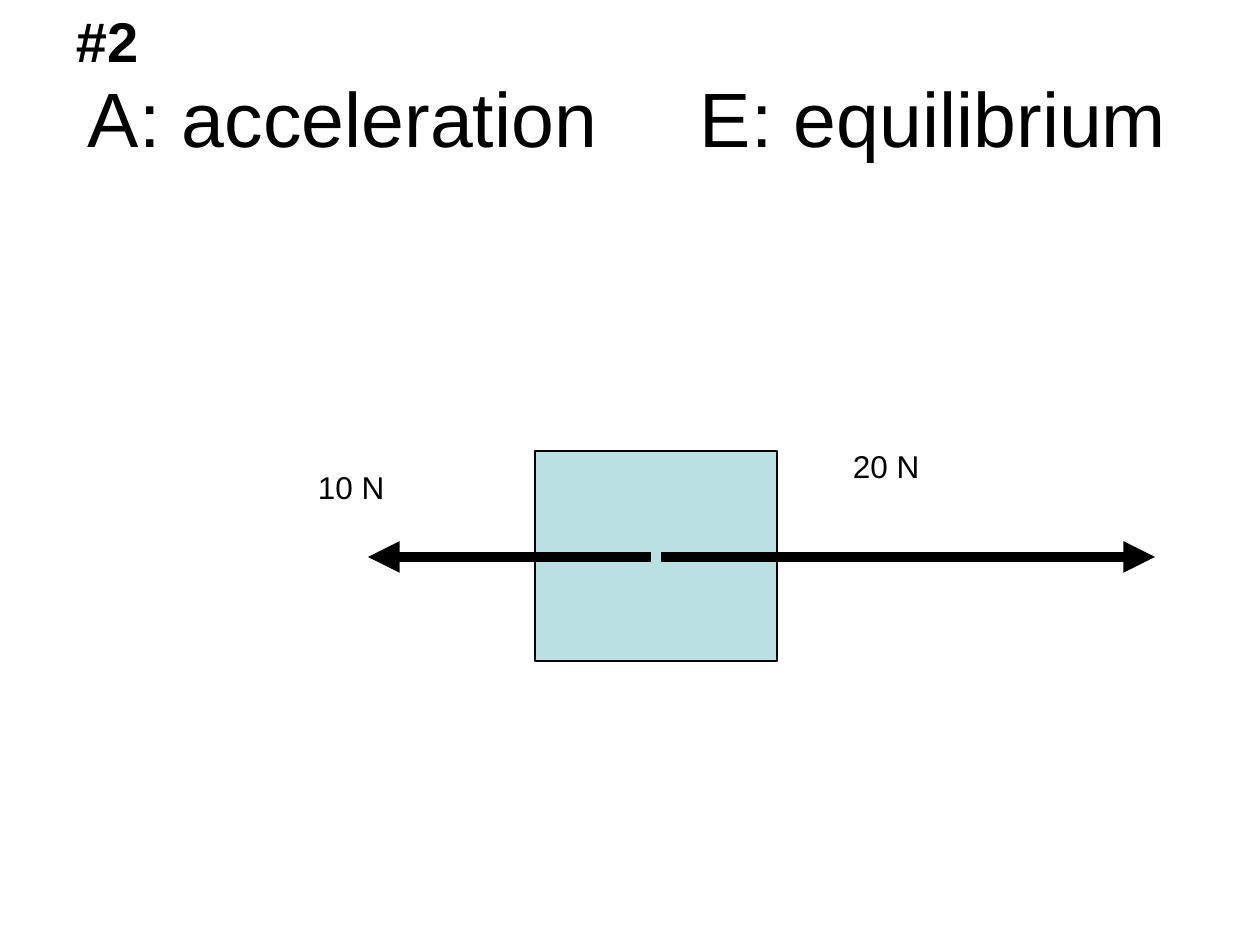
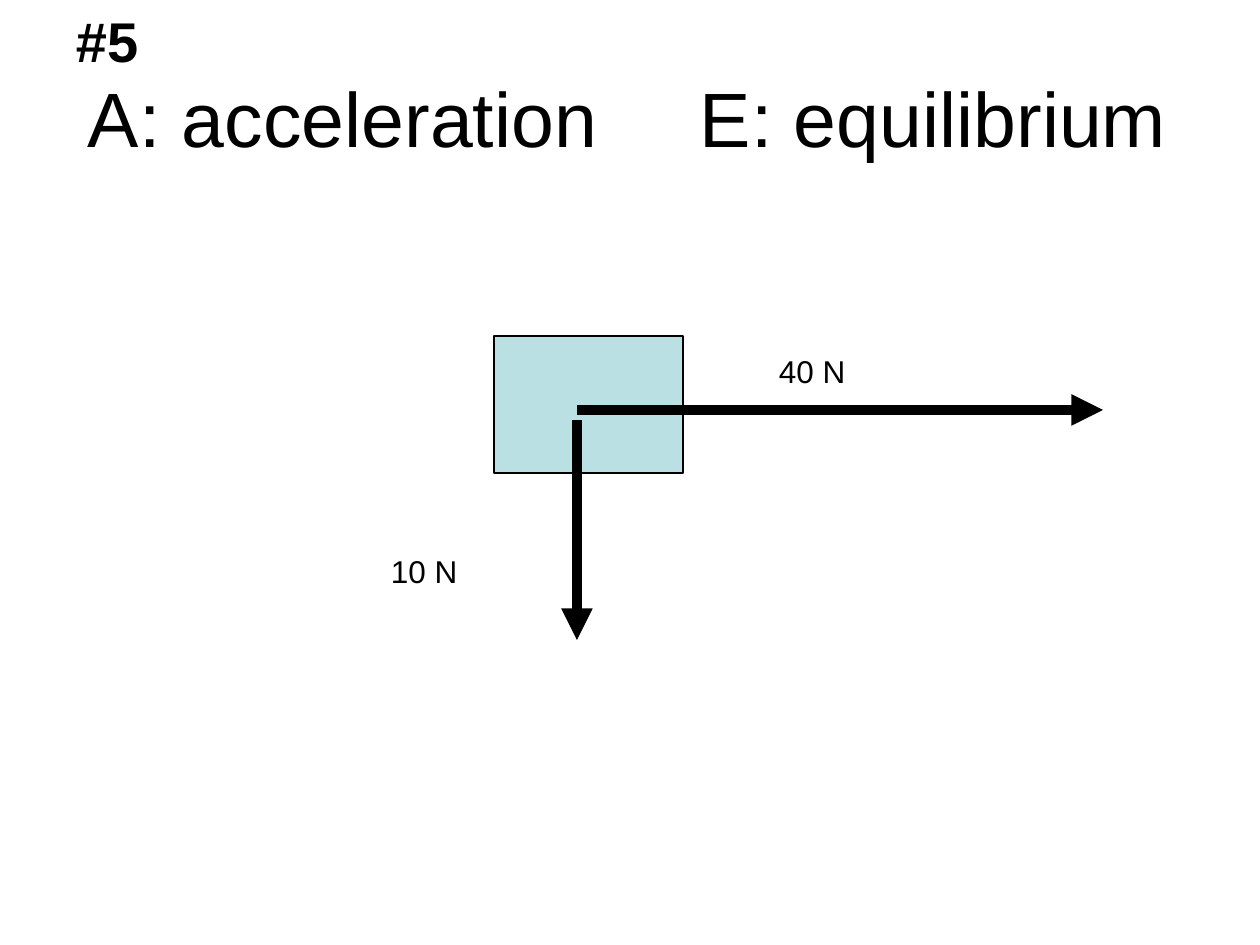
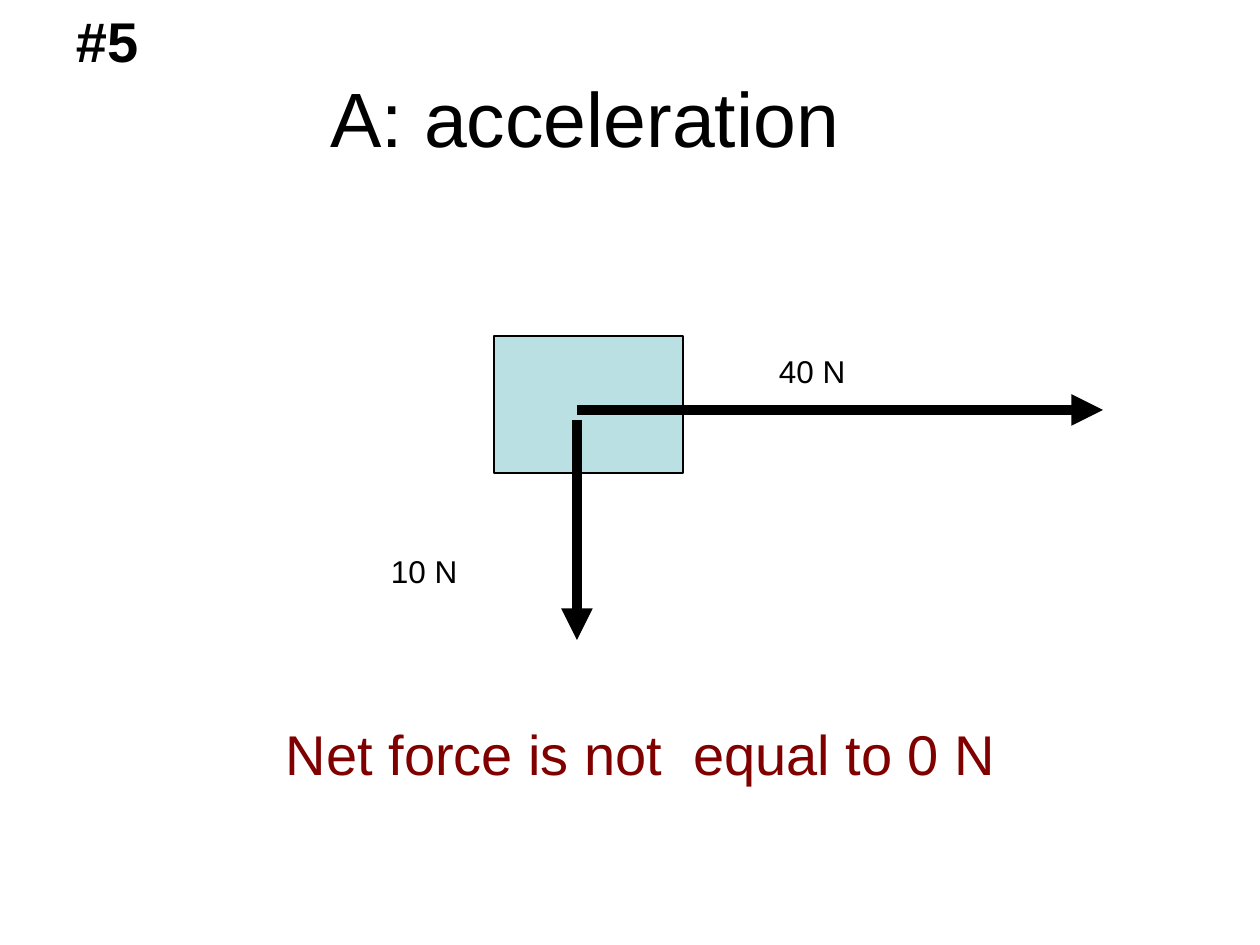
from lxml import etree
from pptx import Presentation
from pptx.dml.color import RGBColor
from pptx.enum.shapes import MSO_CONNECTOR, MSO_SHAPE
from pptx.enum.text import MSO_ANCHOR, PP_ALIGN
from pptx.oxml.ns import qn
from pptx.util import Emu, Pt

RECT, STRAIGHT = MSO_SHAPE.RECTANGLE, MSO_CONNECTOR.STRAIGHT
LEFT, CENTER = PP_ALIGN.LEFT, PP_ALIGN.CENTER
TOP, MIDDLE = MSO_ANCHOR.TOP, MSO_ANCHOR.MIDDLE

PX_PER_INCH = 126
SLIDE_W, SLIDE_H = 1260, 945
FONT, BLACK, MAROON, PALE_BLUE = "Arial", "000000", "800000", "BBE0E3"
INSET_X, INSET_Y = 13, 6
TITLE_BOX = (63, 38, 1134, 157)
NUMBER_BOX = (63, 0, 147, 79)
VERDICT_BOX = (273, 714, 777, 79)

CHOICES = {"text": "A: acceleration\tE: equilibrium", "align": LEFT, "left": 25, "tab": 612}
ANSWER = {"text": "A: acceleration", "align": CENTER, "right": 103}

OPPOSED = {
    "box": (535, 451, 242, 210),
    "forces": [
        {"start": (126, 106), "reach": (494, 0), "label": "20 N", "label_box": (305, -10, 136, 50)},
        {"start": (116, 106), "reach": (-283, 0), "label": "10 N", "label_box": (-230, 11, 136, 50)},
    ],
}
PERPENDICULAR = {
    "box": (494, 336, 189, 137),
    "forces": [
        {"start": (83, 84), "reach": (0, 220), "label": "10 N", "label_box": (-116, 210, 136, 50)},
        {"start": (83, 74), "reach": (526, 0), "label": "40 N", "label_box": (272, 10, 189, 50)},
    ],
}
SLIDES = [
    {"number": "#2", "title": CHOICES, "diagram": OPPOSED},
    {"number": "#5", "title": CHOICES, "diagram": PERPENDICULAR},
    {"number": "#5", "title": ANSWER, "diagram": PERPENDICULAR,
     "verdict": "Net force is not  equal to 0 N"},
]


def px(n):
    """Turn pixels into EMU."""
    return Emu(round(n * 914400 / PX_PER_INCH))


def rgb(color):
    """Turn a hex string into a colour."""
    return RGBColor.from_string(color)


def set_all(obj, values):
    """Set each attribute named in a dict."""
    for name, value in values.items():
        setattr(obj, name, value)


def add_text(s, box, text, size, color=BLACK, bold=False, align=LEFT, anchor=TOP,
             left=INSET_X, right=INSET_X, tab=None):
    """Write one line of text in a box, with an optional tab stop."""
    tf = s.shapes.add_textbox(*map(px, box)).text_frame
    set_all(tf, {"word_wrap": True, "vertical_anchor": anchor,
                 "margin_left": px(left), "margin_right": px(right),
                 "margin_top": px(INSET_Y), "margin_bottom": px(INSET_Y)})
    p = tf.paragraphs[0]
    p.alignment = align
    if tab:
        tabs = etree.SubElement(p._p.get_or_add_pPr(), qn("a:tabLst"))
        etree.SubElement(tabs, qn("a:tab"), pos=str(px(tab)), algn="l")
    r = p.add_run()
    r.text = text
    set_all(r.font, {"name": FONT, "size": Pt(size), "bold": bold})
    r.font.color.rgb = rgb(color)


def set_line(line, width):
    """Give a line its black colour and its width."""
    line.color.rgb = rgb(BLACK)
    line.width = Pt(width)


def add_arrow(s, x, y, dx, dy):
    """Draw a force arrow from a point over a given reach."""
    c = s.shapes.add_connector(STRAIGHT, *map(px, (x, y, x + dx, y + dy)))
    set_line(c.line, 6)
    etree.SubElement(c.line._get_or_add_ln(), qn("a:tailEnd"), type="triangle")
    etree.SubElement(c._element.spPr, qn("a:effectLst"))


def add_diagram(s, box, forces):
    """Draw a body with its forces and labels, placed from the body's corner."""
    x, y = box[:2]
    sp = s.shapes.add_shape(RECT, *map(px, box))
    sp.shadow.inherit = False
    sp.fill.solid()
    sp.fill.fore_color.rgb = rgb(PALE_BLUE)
    set_line(sp.line, 0.75)
    for force in forces:
        start_x, start_y = force["start"]
        add_arrow(s, x + start_x, y + start_y, *force["reach"])
        label_x, label_y, w, h = force["label_box"]
        add_text(s, (x + label_x, y + label_y, w, h), force["label"], 18)


def add_question(prs, number, title, diagram, verdict=None):
    """Add a question slide, with a verdict when it is answered."""
    s = prs.slides.add_slide(prs.slide_layouts[6])
    add_text(s, TITLE_BOX, size=44, anchor=MIDDLE, **title)
    add_diagram(s, **diagram)
    add_text(s, NUMBER_BOX, number, 32, bold=True)
    if verdict:
        add_text(s, VERDICT_BOX, verdict, 32, MAROON)


def main():
    """Build and save the presentation."""
    prs = Presentation()
    set_all(prs, {"slide_width": px(SLIDE_W), "slide_height": px(SLIDE_H)})
    for question in SLIDES:
        add_question(prs, **question)
    prs.save("out.pptx")


if __name__ == "__main__":
    main()
